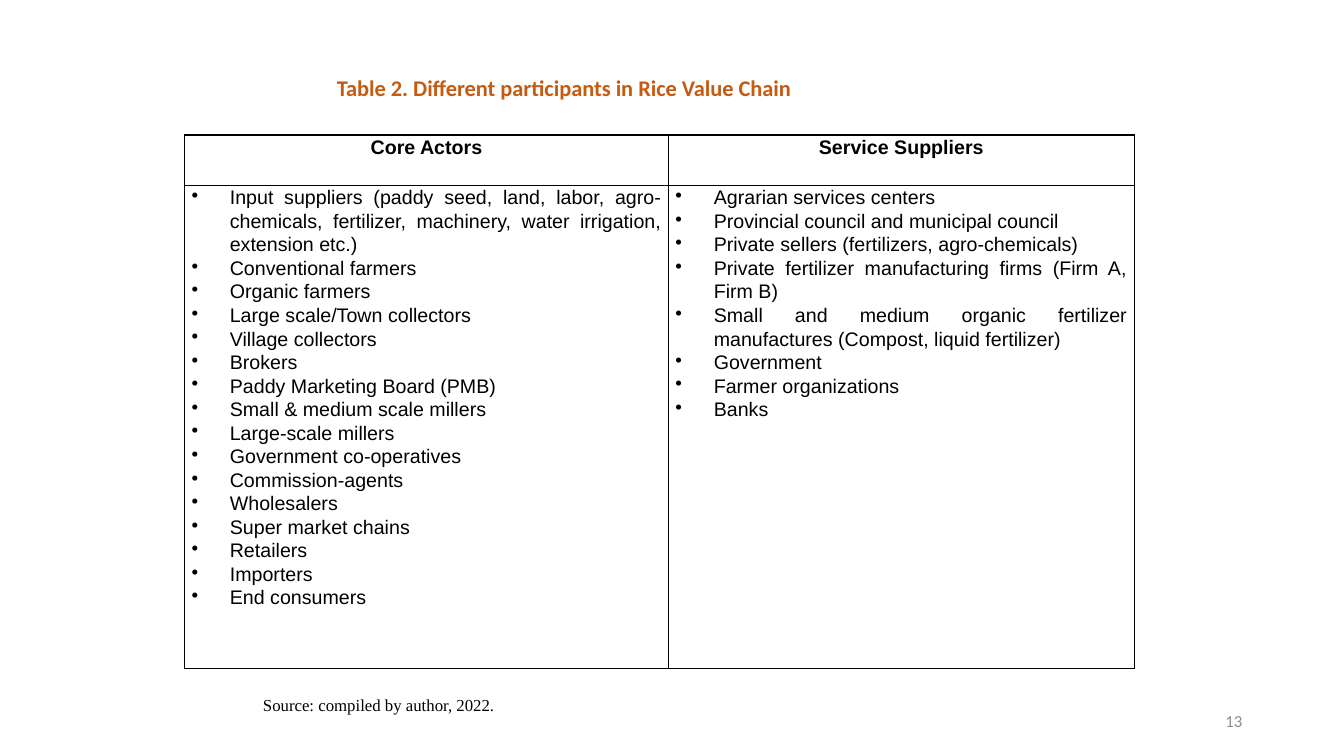
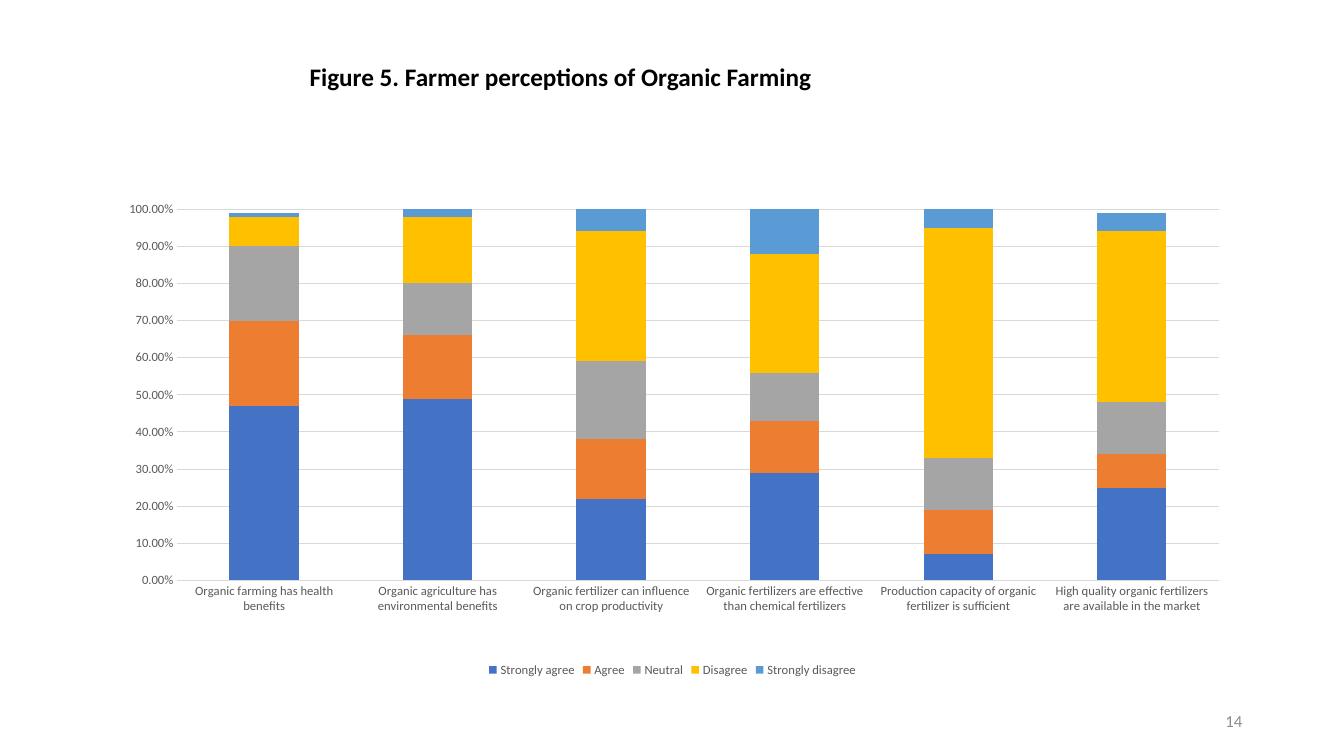
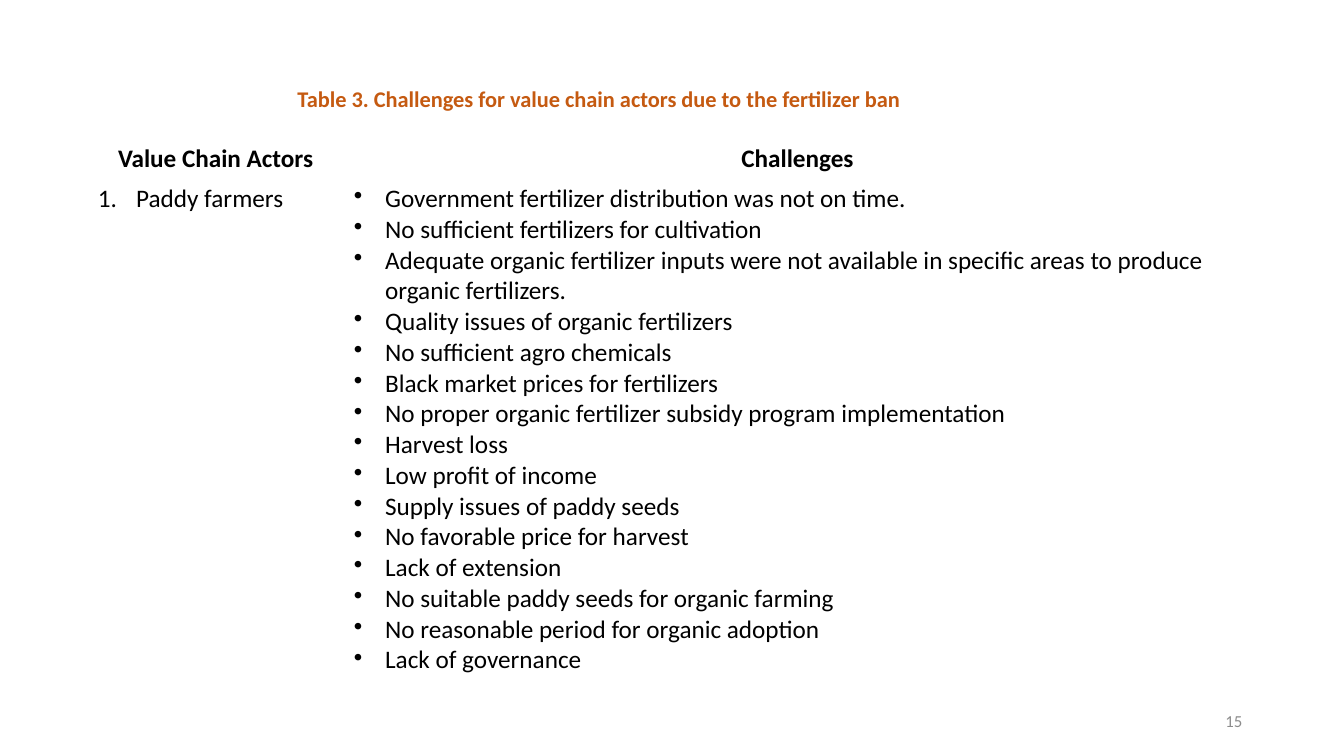
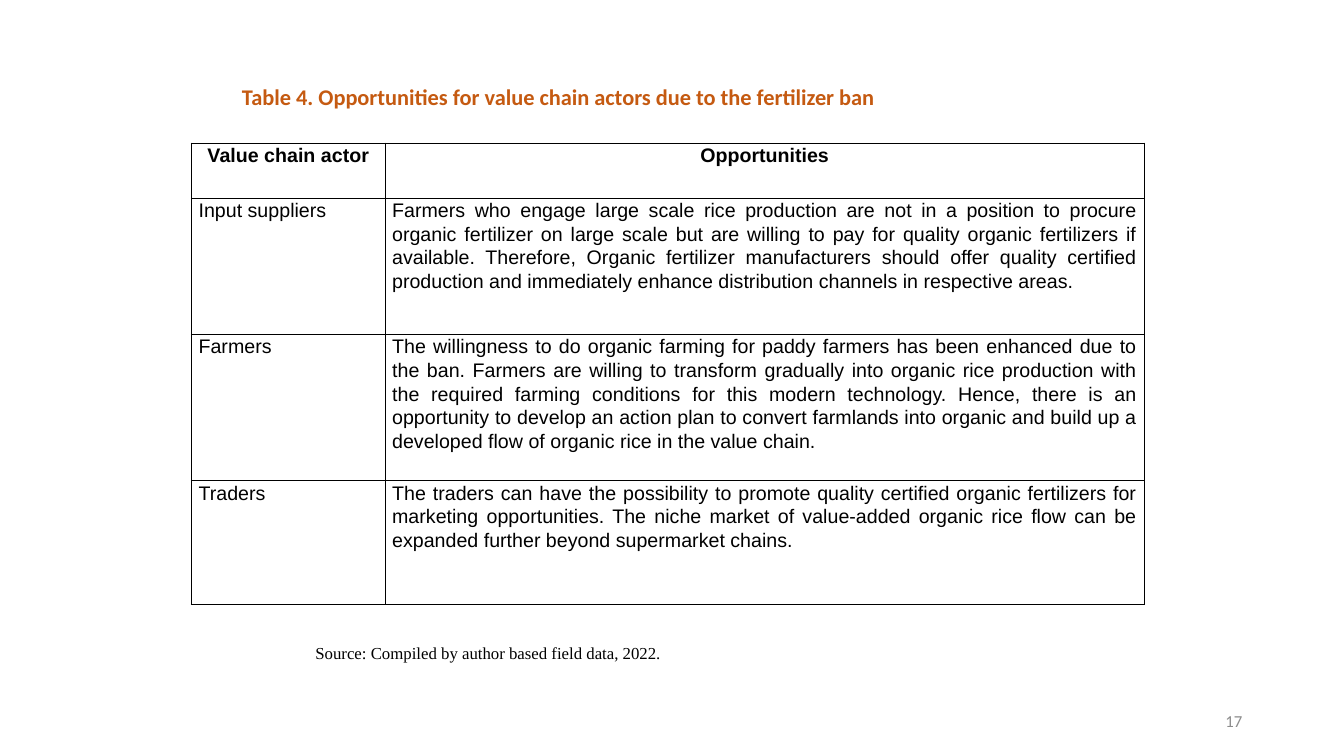
from lxml import etree
from pptx import Presentation
from pptx import util as u
from pptx.chart.data import CategoryChartData
from pptx.dml.color import RGBColor
from pptx.enum import chart as ch, text
from pptx.oxml import parse_xml
from pptx.oxml.ns import nsdecls, qn

PX = 9144  # 100 px to the inch
BLACK = RGBColor(0x00, 0x00, 0x00)
WHITE = RGBColor(0xFF, 0xFF, 0xFF)
RUST = RGBColor(0xC5, 0x5A, 0x11)
NUMBER_GREY = RGBColor(0x8C, 0x8C, 0x8C)
LABEL_GREY = RGBColor(0x59, 0x59, 0x59)
GRID_GREY = RGBColor(0xD9, 0xD9, 0xD9)
SERIES_COLOURS = [RGBColor.from_string(c) for c in
                  ("4472C4", "ED7D31", "A5A5A5", "FFC000", "5B9BD5")]

LEFT, CENTER, RIGHT, JUSTIFY = (text.PP_ALIGN.LEFT, text.PP_ALIGN.CENTER,
                                text.PP_ALIGN.RIGHT, text.PP_ALIGN.JUSTIFY)
DOT = ("a:buChar", {"char": "•"})
NUMBERED = ("a:buAutoNum", {"type": "arabicPeriod"})

ARIAL = {"name": "Arial", "size": u.Pt(14), "bold": False}
CALIBRI = {"name": "Calibri", "size": u.Pt(18), "bold": False}
SOURCE = {"name": "Times New Roman", "size": u.Pt(12)}
NUMBER = {"name": "Calibri", "size": u.Pt(12)}
LABEL = {"name": "Calibri", "size": u.Pt(9)}


def write(tf, lines, font, align=LEFT, spacing=1.0, bullet=None, indent=0, colour=BLACK):
    """Fill a text frame, one paragraph a line, with an optional hanging bullet."""
    for i, line in enumerate(lines):
        p = tf.paragraphs[0] if i == 0 else tf.add_paragraph()
        p.alignment, p.line_spacing = align, spacing
        if bullet:
            pPr = p._p.get_or_add_pPr()
            pPr.set("marL", str(indent * PX))
            pPr.set("indent", str(-indent * PX))
            etree.SubElement(pPr, qn(bullet[0]), bullet[1])
        r = p.add_run()
        r.text = line
        for key, value in font.items():
            setattr(r.font, key, value)
        r.font.color.rgb = colour


def add_table(s, left, top, cols, rows, cells, font, border, margins, spacing=1.0):
    """Add a ruled table; each cell is (lines, extra arguments of write)."""
    tbl = s.shapes.add_table(len(rows), len(cols), left * PX, top * PX,
                             sum(cols) * PX, sum(rows) * PX).table
    tbl.first_row = tbl.horz_banding = False
    for i, width in enumerate(cols):
        tbl.columns[i].width = width * PX
    for i, height in enumerate(rows):
        tbl.rows[i].height = height * PX
    for n, (lines, extra) in enumerate(cells):
        row, col = divmod(n, len(cols))
        cell = tbl.cell(row, col)
        cell.margin_left = cell.margin_right = margins[0] * PX
        cell.margin_top = cell.margin_bottom = margins[1] * PX
        cell.fill.background()
        for i, side in enumerate("LRTB"):
            cell._tc.get_or_add_tcPr().insert(i, parse_xml(
                f'<a:ln{side} w="12700" {nsdecls("a")}><a:solidFill>'
                f'<a:srgbClr val="{border}"/></a:solidFill></a:ln{side}>'))
        look = dict(font, bold=row == 0)
        write(cell.text_frame, lines, look, spacing=spacing, **extra)


prs = Presentation()
prs.slide_width, prs.slide_height = 1333 * PX, 750 * PX

# Titles and slide numbers
slides = []
for number, title, box, size, colour in [
    (13, "Table 2. Different participants in Rice Value Chain", (324, 68, 519, 37), 16, RUST),
    (14, "Figure 5. Farmer perceptions of Organic Farming", (297, 40, 945, 145), 18, BLACK),
    (15, "Table 3. Challenges for value chain actors due to the fertilizer ban",
     (285, 79, 987, 37), 16, RUST),
    (17, "Table 4. Opportunities for value chain actors due to the fertilizer ban",
     (230, 77, 1012, 37), 16, RUST),
]:
    s = prs.slides.add_slide(prs.slide_layouts[5])
    slides.append(s)
    sp = s.shapes.title
    sp.left, sp.top, sp.width, sp.height = [v * PX for v in box]
    tf = sp.text_frame
    tf.auto_size, tf.vertical_anchor = text.MSO_AUTO_SIZE.NONE, text.MSO_ANCHOR.MIDDLE
    write(tf, [title], {"name": "Calibri", "size": u.Pt(size), "bold": True}, colour=colour)

    tf = s.shapes.add_textbox(942 * PX, 695 * PX, 300 * PX, 40 * PX).text_frame
    tf.word_wrap, tf.vertical_anchor = True, text.MSO_ANCHOR.MIDDLE
    write(tf, [str(number)], NUMBER, RIGHT, colour=NUMBER_GREY)
participants, perceptions, challenges, opportunities = slides

# The figure title sits in the upper part of its tall box
perceptions.shapes.title.text_frame.margin_bottom = 79 * PX

# Source lines
for s, line, box, spacing in [
    (participants, "Source: compiled by author, 2022.", (251, 683, 253, 32), 1.07),
    (opportunities, "Source: Compiled by author based field data, 2022.", (303, 633, 367, 30), 1.0),
]:
    tf = s.shapes.add_textbox(*[v * PX for v in box]).text_frame
    tf.word_wrap = False
    write(tf, [line], SOURCE, spacing=spacing)

# Table 2
centred = {"align": CENTER}
justified = {"align": JUSTIFY}
dotted = {"align": JUSTIFY, "bullet": DOT, "indent": 38}
add_table(participants, 183, 134, [480, 462], [50, 479], [
    (["Core Actors"], centred),
    (["Service Suppliers"], centred),
    (["Input suppliers (paddy seed, land, labor, agro-chemicals, fertilizer, machinery, "
      "water irrigation, extension etc.)",
      "Conventional farmers",
      "Organic farmers",
      "Large scale/Town collectors",
      "Village collectors",
      "Brokers",
      "Paddy Marketing Board (PMB)",
      "Small & medium scale millers",
      "Large-scale millers",
      "Government co-operatives",
      "Commission-agents",
      "Wholesalers",
      "Super market chains",
      "Retailers",
      "Importers",
      "End consumers"], dotted),
    (["Agrarian services centers",
      "Provincial council and municipal council",
      "Private sellers (fertilizers, agro-chemicals)",
      "Private fertilizer manufacturing firms (Firm A, Firm B)",
      "Small and medium organic fertilizer manufactures (Compost, liquid fertilizer)",
      "Government",
      "Farmer organizations",
      "Banks"], dotted),
], ARIAL, BLACK, (7, 0), 1.07)

# Figure 5
data = CategoryChartData(number_format="0.00%")
data.categories = [
    "Organic farming has health benefits",
    "Organic agriculture has environmental benefits",
    "Organic fertilizer can influence on crop productivity",
    "Organic fertilizers are effective than chemical fertilizers",
    "Production capacity of organic fertilizer is sufficient",
    "High quality organic fertilizers are available in the market",
]
for name, values in [
    ("Strongly agree", (0.47, 0.49, 0.22, 0.29, 0.07, 0.25)),
    ("Agree", (0.23, 0.17, 0.16, 0.14, 0.12, 0.09)),
    ("Neutral", (0.2, 0.14, 0.21, 0.13, 0.14, 0.14)),
    ("Disagree", (0.08, 0.18, 0.35, 0.32, 0.62, 0.46)),
    ("Strongly disagree", (0.01, 0.02, 0.06, 0.13, 0.05, 0.05)),
]:
    data.add_series(name, values)
chart = perceptions.shapes.add_chart(ch.XL_CHART_TYPE.COLUMN_STACKED, 92 * PX, 200 * PX,
                                     1150 * PX, 476 * PX, data).chart
chart.has_title = False
chart.has_legend = True
chart.legend.position = ch.XL_LEGEND_POSITION.BOTTOM
chart.legend.include_in_layout = False

plot = chart.plots[0]
plot.gap_width, plot.overlap, plot.vary_by_categories = 150, 100, False
for series, colour in zip(plot.series, SERIES_COLOURS):
    series.format.fill.solid()
    series.format.fill.fore_color.rgb = colour

cat, val = chart.category_axis, chart.value_axis
val.minimum_scale, val.maximum_scale, val.major_unit = 0, 1, 0.1
val.tick_labels.number_format = "0.00%"
val.tick_labels.number_format_is_linked = False
val.has_major_gridlines = True
for axis in (cat, val):
    axis.major_tick_mark = axis.minor_tick_mark = ch.XL_TICK_MARK.NONE
for line in (cat.format.line, val.major_gridlines.format.line):
    line.color.rgb, line.width = GRID_GREY, u.Pt(0.75)
val.format.line.fill.background()
for font in (chart.font, cat.tick_labels.font, val.tick_labels.font, chart.legend.font):
    for key, value in LABEL.items():
        setattr(font, key, value)
    font.color.rgb = LABEL_GREY

plot_area = chart._chartSpace.chart.plotArea
for old in plot_area.findall(qn("c:layout")):
    plot_area.remove(old)
plot_area.insert(0, parse_xml(
    f'<c:layout {nsdecls("c")}><c:manualLayout><c:layoutTarget val="inner"/>'
    '<c:xMode val="edge"/><c:yMode val="edge"/><c:x val="0.073"/><c:y val="0.016"/>'
    '<c:w val="0.898"/><c:h val="0.774"/></c:manualLayout></c:layout>'))

# Table 3
add_table(challenges, 87, 137, [254, 900], [40, 518], [
    (["Value Chain Actors"], centred),
    (["Challenges"], centred),
    (["Paddy farmers"], {"bullet": NUMBERED, "indent": 38}),
    (["Government fertilizer distribution was not on time.",
      "No sufficient fertilizers for cultivation",
      "Adequate organic fertilizer inputs were not available in specific areas to produce "
      "organic fertilizers.",
      "Quality issues of organic fertilizers",
      "No sufficient agro chemicals",
      "Black market prices for fertilizers",
      "No proper organic fertilizer subsidy program implementation",
      "Harvest loss",
      "Low profit of income",
      "Supply issues of paddy seeds",
      "No favorable price for harvest",
      "Lack of extension",
      "No suitable paddy seeds for organic farming",
      "No reasonable period for organic adoption",
      "Lack of governance"], {"bullet": DOT, "indent": 31}),
], CALIBRI, WHITE, (10, 5))

# Table 4
add_table(opportunities, 190, 142, [192, 753], [55, 135, 145, 123], [
    (["Value chain actor"], centred),
    (["Opportunities"], centred),
    (["Input suppliers"], {}),
    (["Farmers who engage large scale rice production are not in a position to procure organic "
      "fertilizer on large scale but are willing to pay for quality organic fertilizers if "
      "available. Therefore, Organic fertilizer manufacturers should offer quality certified "
      "production and immediately enhance distribution channels in respective areas."], justified),
    (["Farmers"], {}),
    (["The willingness to do organic farming for paddy farmers has been enhanced due to the ban. "
      "Farmers are willing to transform gradually into organic rice production with the required "
      "farming conditions for this modern technology. Hence, there is an opportunity to develop "
      "an action plan to convert farmlands into organic and build up a developed flow of organic "
      "rice in the value chain."], justified),
    (["Traders"], {}),
    (["The traders can have the possibility to promote quality certified organic fertilizers for "
      "marketing opportunities. The niche market of value-added organic rice flow can be expanded "
      "further beyond supermarket chains."], justified),
], ARIAL, BLACK, (7, 0), 1.07)

prs.save("out.pptx")
